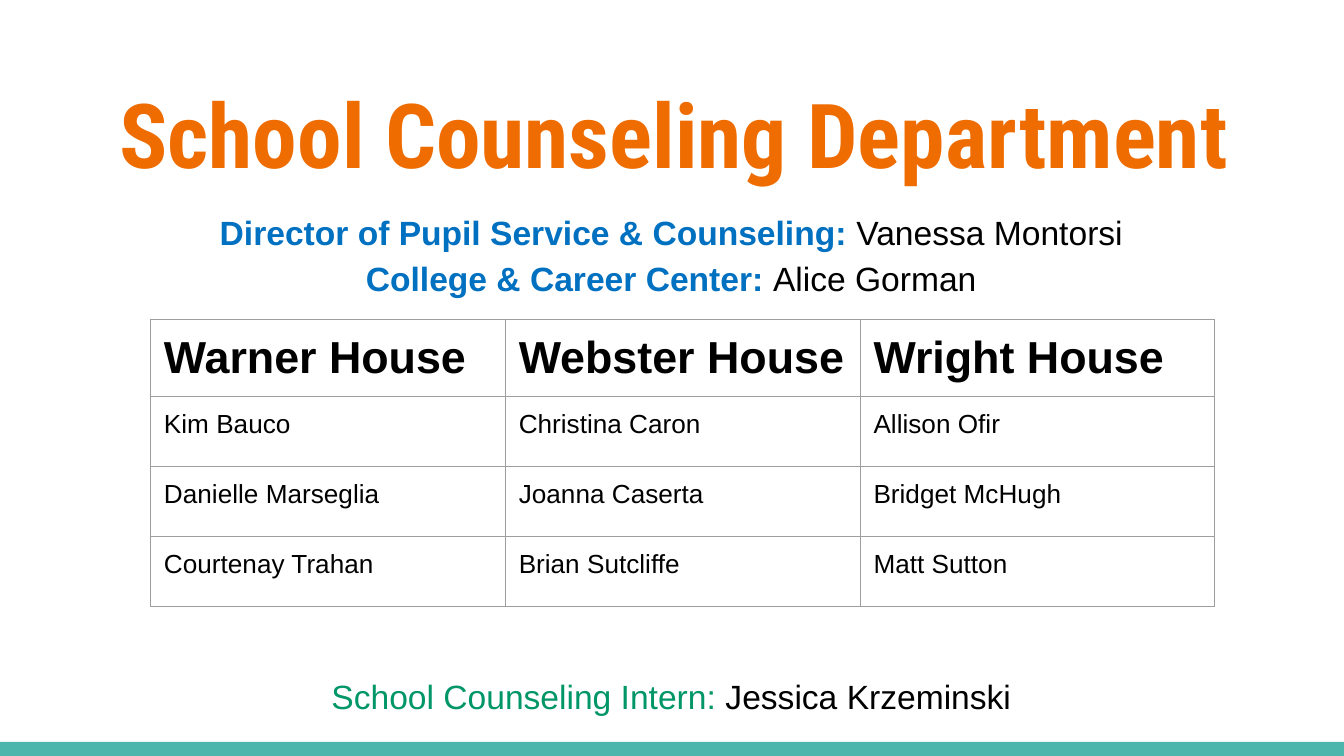
from pptx import Presentation, util as u
from pptx.dml.color import RGBColor
from pptx.enum import shapes, text
from pptx.oxml import parse_xml
from pptx.oxml.ns import nsdecls

ORANGE = RGBColor(0xEF, 0x6C, 0x00)
BLUE = RGBColor(0x00, 0x70, 0xC0)
GREEN = RGBColor(0x00, 0x96, 0x68)
TEAL = RGBColor(0x4D, 0xB6, 0xAC)
GREY = RGBColor(0x9E, 0x9E, 0x9E)
BLACK = RGBColor(0, 0, 0)
WHITE = RGBColor(0xFF, 0xFF, 0xFF)

STAFF = [
    ("Director of Pupil Service & Counseling: ", "Vanessa Montorsi", BLUE, True, 0),
    ("College & Career Center: ", "Alice Gorman", BLUE, True, 0),
    ("School Counseling Intern:", " Jessica Krzeminski", GREEN, False, 199),
]
HOUSES = [
    ("Warner House", "Webster House", "Wright House"),
    ("Kim Bauco", "Christina Caron", "Allison Ofir"),
    ("Danielle Marseglia", "Joanna Caserta", "Bridget McHugh"),
    ("Courtenay Trahan", "Brian Sutcliffe", "Matt Sutton"),
]


def add_run(p, words, size, color, bold=False, font="Arial"):
    """Append one formatted run to a paragraph."""
    r = p.add_run()
    r.text = words
    r.font.size, r.font.bold, r.font.name = u.Pt(size), bold, font
    r.font.color.rgb = color


def set_frame(tf):
    """Give a text frame even margins, wrapping and a top anchor."""
    tf.margin_left = tf.margin_right = tf.margin_top = tf.margin_bottom = u.Inches(0.1)
    tf.word_wrap = True
    tf.auto_size = text.MSO_AUTO_SIZE.NONE
    tf.vertical_anchor = text.MSO_ANCHOR.TOP


def add_footer_bar(s, x, y, w, h):
    """Draw the coloured bar along the bottom edge."""
    sp = s.shapes.add_shape(shapes.MSO_SHAPE.RECTANGLE, *map(u.Inches, (x, y, w, h)))
    sp.shadow.inherit = False
    sp.fill.solid()
    sp.fill.fore_color.rgb = TEAL
    sp.line.fill.background()


def place_title(s, x, y, w, h):
    """Place and format the title placeholder."""
    sp = s.shapes.title
    sp.left, sp.top, sp.width, sp.height = map(u.Inches, (x, y, w, h))
    set_frame(sp.text_frame)
    p = sp.text_frame.paragraphs[0]
    p.alignment = text.PP_ALIGN.CENTER
    add_run(p, "School Counseling Department", 48, ORANGE, True, "Roboto Condensed")


def add_staff(s, x, y, w, h):
    """Write the staff lines above and below the house table."""
    tf = s.shapes.add_textbox(*map(u.Inches, (x, y, w, h))).text_frame
    set_frame(tf)
    for i, (role, name, color, bold, gap) in enumerate(STAFF):
        p = tf.add_paragraph() if i else tf.paragraphs[0]
        p.alignment = text.PP_ALIGN.CENTER
        p.line_spacing = 1.15
        p.space_before = u.Pt(gap)
        add_run(p, role, 18, color, bold)
        add_run(p, name, 18, BLACK)


def set_borders(cell):
    """Outline all four sides of a table cell."""
    tcPr = cell._tc.get_or_add_tcPr()
    for i, side in enumerate(("lnL", "lnR", "lnT", "lnB")):
        tcPr.insert(i, parse_xml(
            f'<a:{side} {nsdecls("a")} w="{u.Pt(0.75)}"><a:solidFill>'
            f'<a:srgbClr val="{GREY}"/></a:solidFill></a:{side}>'))


def add_houses(s, x, y, w, header_h, row_h):
    """Build the table of counselors, one column per house."""
    rows, cols = len(HOUSES), len(HOUSES[0])
    h = header_h + row_h * (rows - 1)
    tbl = s.shapes.add_table(rows, cols, *map(u.Inches, (x, y, w, h))).table
    for col in tbl.columns:
        col.width = u.Inches(w / cols)
    for i, names in enumerate(HOUSES):
        tbl.rows[i].height = u.Inches(row_h if i else header_h)
        for j, name in enumerate(names):
            cell = tbl.cell(i, j)
            cell.margin_left = cell.margin_right = u.Inches(0.1)
            cell.margin_top = cell.margin_bottom = u.Inches(0.1)
            cell.fill.solid()
            cell.fill.fore_color.rgb = WHITE
            set_borders(cell)
            add_run(cell.text_frame.paragraphs[0], name, 14 if i else 24, BLACK, i == 0)


def main():
    """Build and save the slide."""
    prs = Presentation()
    prs.slide_width = u.Inches(10)
    prs.slide_height = prs.slide_width * 9 // 16
    s = prs.slides.add_slide(prs.slide_layouts[5])
    add_footer_bar(s, 0, 5.52, 10, 0.11)
    place_title(s, 0.52, 0.49, 8.99, 0.84)
    add_staff(s, 0.06, 1.43, 9.87, 4.05)
    add_houses(s, 1.12, 2.38, 7.92, 0.57, 0.52)
    prs.save("out.pptx")


if __name__ == "__main__":
    main()
